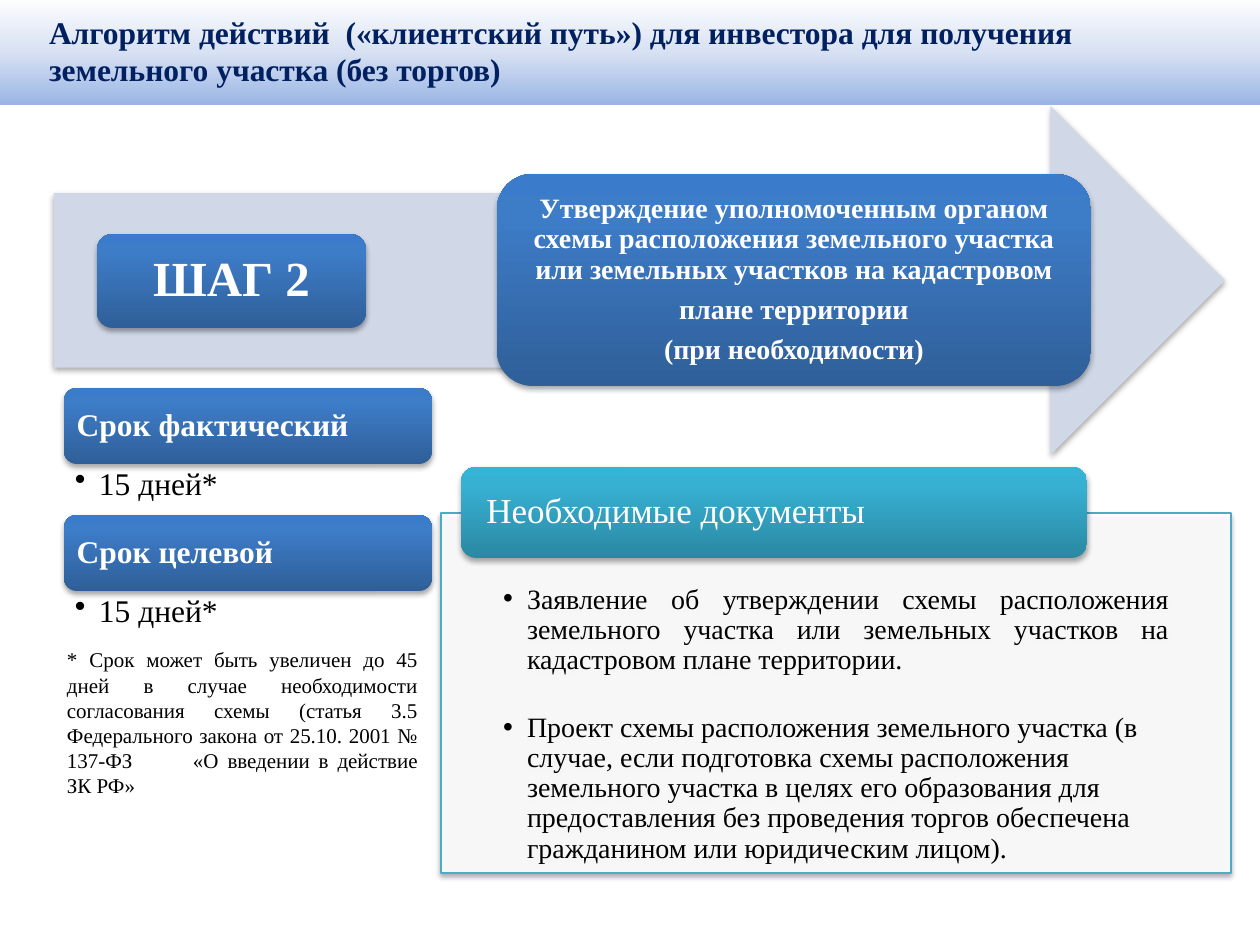
"""Build the slide on step 2 of obtaining a land plot without an auction."""
from dataclasses import dataclass

import lxml.etree
import pptx
import pptx.dml.color
import pptx.enum.shapes
import pptx.enum.text
import pptx.oxml.ns
import pptx.util

EMU_PER_PX = 914400 / 126
ALIGN = pptx.enum.text.PP_ALIGN
ANCHOR = pptx.enum.text.MSO_ANCHOR
SHAPE = pptx.enum.shapes.MSO_SHAPE
Stops = tuple[tuple[int, str], ...]


@dataclass(frozen=True)
class Theme:
    font: str = "Times New Roman"
    navy: str = "002060"
    white: str = "FFFFFF"
    black: str = "000000"
    arrow: str = "D0D8E8"
    teal_line: str = "4BACC6"
    blue: Stops = ((0, "2F5F99"), (80, "3D7CC7"), (100, "3A7CCB"))
    teal: Stops = ((0, "2A88A2"), (80, "37B1D2"), (100, "34B4D6"))
    header: Stops = ((0, "9AB5E4"), (50, "D9E2F3"), (100, "FFFFFF"))
    step_size: int = 28
    tab_size: int = 20
    title_size: int = 18
    body_size: int = 16
    note_size: int = 12


@dataclass(frozen=True)
class Box:
    left: int
    top: int
    width: int
    height: int


@dataclass(frozen=True)
class TextStyle:
    size: int
    color: str
    bold: bool = False
    align: ALIGN = ALIGN.LEFT
    anchor: ANCHOR = ANCHOR.TOP
    insets: tuple[int, int, int, int] = (13, 6, 13, 6)
    line_spacing: float = 0.9
    space_after: float = 0
    margin: int = 0
    bullet: bool = False


@dataclass(frozen=True)
class Card:
    box: Box
    lines: tuple[str, ...]
    stops: Stops
    style: TextStyle


@dataclass(frozen=True)
class Term:
    label: str
    value: str


THEME = Theme()


def px(value: float) -> pptx.util.Emu:
    """Convert pixels to EMU."""
    return pptx.util.Emu(round(value * EMU_PER_PX))


def rgb(color: str) -> pptx.dml.color.RGBColor:
    """Convert a hex string to a colour."""
    return pptx.dml.color.RGBColor.from_string(color)


def add_node(parent, tag: str, **attributes):
    """Append a DrawingML element to its parent."""
    values = {name: str(value) for name, value in attributes.items()}
    return lxml.etree.SubElement(parent, pptx.oxml.ns.qn(f"a:{tag}"), values)


def place(shape, box: Box) -> None:
    """Move and size a shape."""
    shape.left, shape.top = px(box.left), px(box.top)
    shape.width, shape.height = px(box.width), px(box.height)


def fill_solid(shape, color: str):
    """Fill a shape with one colour and return the colour element."""
    shape.fill.solid()
    shape.fill.fore_color.rgb = rgb(color)
    return shape._element.spPr.find(pptx.oxml.ns.qn("a:solidFill"))[0]


def fill_gradient(shape, stops: Stops) -> None:
    """Fill a shape with a gradient running from bottom to top."""
    solid = fill_solid(shape, stops[0][1]).getparent()
    gradient = add_node(solid.getparent(), "gradFill", rotWithShape=1)
    solid.getparent().replace(solid, gradient)
    stop_list = add_node(gradient, "gsLst")
    for position, color in stops:
        stop = add_node(stop_list, "gs", pos=position * 1000)
        add_node(stop, "srgbClr", val=color)
    add_node(gradient, "lin", ang=270 * 60000, scaled=0)


def cast_shadow(shape) -> None:
    """Give a shape a soft shadow below it."""
    shape.shadow.inherit = False
    effects = shape._element.spPr.find(pptx.oxml.ns.qn("a:effectLst"))
    shadow = add_node(effects, "outerShdw", blurRad=pptx.util.Pt(3.1), dist=pptx.util.Pt(1.8),
                      dir=90 * 60000, rotWithShape=0)
    add_node(add_node(shadow, "srgbClr", val=THEME.black), "alpha", val=35000)


def write(shape, lines: tuple[str, ...], style: TextStyle) -> None:
    """Write styled paragraphs into a shape."""
    frame = shape.text_frame
    frame.text = "\n".join(lines)
    frame.word_wrap = True
    frame.auto_size = pptx.enum.text.MSO_AUTO_SIZE.NONE
    frame.vertical_anchor = style.anchor
    frame.margin_left, frame.margin_top, frame.margin_right, frame.margin_bottom = map(px, style.insets)
    for paragraph in frame.paragraphs:
        paragraph.alignment = style.align
        paragraph.line_spacing = style.line_spacing
        paragraph.space_before = pptx.util.Pt(0)
        paragraph.space_after = pptx.util.Pt(style.space_after)
        properties = paragraph._p.get_or_add_pPr()
        properties.set("marL", str(px(style.margin)))
        properties.set("indent", str(px(-style.margin if style.bullet else 0)))
        if style.bullet:
            add_node(properties, "buChar", char="•")
        for run in paragraph.runs:
            run.font.name = THEME.font
            run.font.size = pptx.util.Pt(style.size)
            run.font.bold = style.bold
            run.font.color.rgb = rgb(style.color)


def add_plain_shape(slide, kind: SHAPE, box: Box):
    """Add a shape with a shadow and no outline."""
    shape = slide.shapes.add_shape(kind, 0, 0, 0, 0)
    place(shape, box)
    shape.line.fill.background()
    cast_shadow(shape)
    return shape


def add_card(slide, card: Card) -> None:
    """Add a rounded gradient card with its text."""
    shape = add_plain_shape(slide, SHAPE.ROUNDED_RECTANGLE, card.box)
    fill_gradient(shape, card.stops)
    write(shape, card.lines, card.style)


def add_text(slide, box: Box, text: str, style: TextStyle):
    """Add a text box."""
    shape = slide.shapes.add_textbox(0, 0, 0, 0)
    place(shape, box)
    write(shape, (text,), style)
    return shape


def add_title(slide) -> None:
    """Format the title placeholder as the header band."""
    title = slide.shapes.title
    place(title, Box(0, -4, 1260, 109))
    fill_gradient(title, THEME.header)
    write(title, ("Алгоритм действий  («клиентский путь») для инвестора для получения \v"
                  "земельного участка (без торгов)",),
          TextStyle(THEME.title_size, THEME.navy, True, anchor=ANCHOR.MIDDLE, line_spacing=1, margin=36))


def add_documents(slide) -> None:
    """Format the body placeholder as the documents panel and add its heading."""
    panel = slide.placeholders[1]
    place(panel, Box(441, 513, 790, 360))
    add_node(fill_solid(panel, THEME.white), "alpha", val=90000)
    panel.line.color.rgb = rgb(THEME.teal_line)
    panel.line.width = pptx.util.Pt(0.75)
    cast_shadow(panel)
    write(panel, (
        "Заявление об утверждении схемы расположения земельного участка или земельных участков "
        "на кадастровом плане территории.",
        "Проект схемы расположения земельного участка (в случае, если подготовка схемы расположения "
        "земельного участка в целях его образования для предоставления без проведения торгов "
        "обеспечена гражданином или юридическим лицом).",
    ), TextStyle(THEME.body_size, THEME.black, insets=(62, 72, 62, 15), space_after=21.5,
                 margin=24, bullet=True))
    panel.text_frame.paragraphs[0].alignment = ALIGN.JUSTIFY
    add_card(slide, Card(Box(461, 467, 626, 91), ("Необходимые документы",), THEME.teal,
                         TextStyle(THEME.tab_size, THEME.white, anchor=ANCHOR.MIDDLE, insets=(21, 0, 21, 0))))


def add_step(slide) -> None:
    """Add the arrow with the step number and its description."""
    arrow = add_plain_shape(slide, SHAPE.RIGHT_ARROW, Box(54, 106, 1171, 349))
    fill_solid(arrow, THEME.arrow)
    add_card(slide, Card(Box(97, 234, 269, 94), ("ШАГ 2",), THEME.blue,
                         TextStyle(THEME.step_size, THEME.white, True, ALIGN.CENTER, ANCHOR.MIDDLE, (15,) * 4)))
    description = ("Утверждение уполномоченным органом схемы расположения земельного участка "
                   "или земельных участков на кадастровом", "плане территории", "(при необходимости)")
    add_card(slide, Card(Box(497, 174, 594, 212), description, THEME.blue,
                         TextStyle(THEME.body_size, THEME.white, True, ALIGN.CENTER, ANCHOR.MIDDLE, (8,) * 4,
                                   space_after=5.6)))


def add_terms(slide) -> None:
    """Add the actual and target terms with the footnote."""
    label_style = TextStyle(THEME.title_size, THEME.white, True, anchor=ANCHOR.MIDDLE, insets=(9,) * 4)
    value_style = TextStyle(THEME.title_size, THEME.black, insets=(11, 4, 18, 4), margin=24, bullet=True)
    terms = (Term("Срок фактический", "15 дней*"), Term("Срок целевой", "15 дней*"))
    for index, term in enumerate(terms):
        top = 388 + 127 * index
        add_card(slide, Card(Box(64, top, 368, 76), (term.label,), THEME.blue, label_style))
        add_text(slide, Box(64, top + 76, 368, 51), term.value, value_style)
    note = add_text(slide, Box(54, 641, 377, 165),
                    "* Срок может быть увеличен до 45 дней в случае необходимости согласования схемы "
                    "(статья 3.5 Федерального закона от 25.10. 2001 № 137-ФЗ\t«О введении в действие ЗК РФ»",
                    TextStyle(THEME.note_size, THEME.black, align=ALIGN.JUSTIFY, line_spacing=1))
    tabs = add_node(note.text_frame.paragraphs[0]._p.get_or_add_pPr(), "tabLst")
    add_node(tabs, "tab", pos=px(137), algn="l")


def main() -> None:
    """Create and save the presentation."""
    presentation = pptx.Presentation()
    presentation.slide_width, presentation.slide_height = px(1260), px(945)
    slide = presentation.slides.add_slide(presentation.slide_layouts[1])
    add_title(slide)
    add_step(slide)
    add_terms(slide)
    add_documents(slide)
    presentation.save("out.pptx")


if __name__ == "__main__":
    main()
